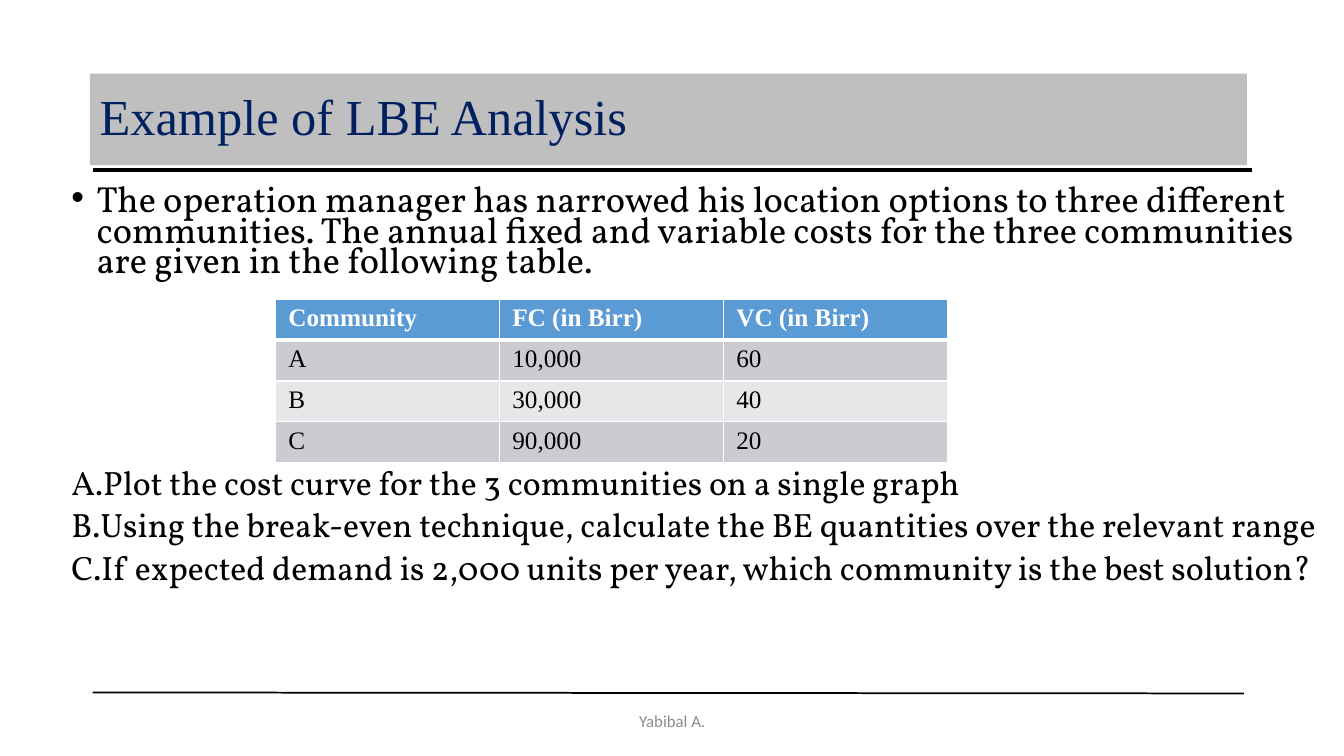
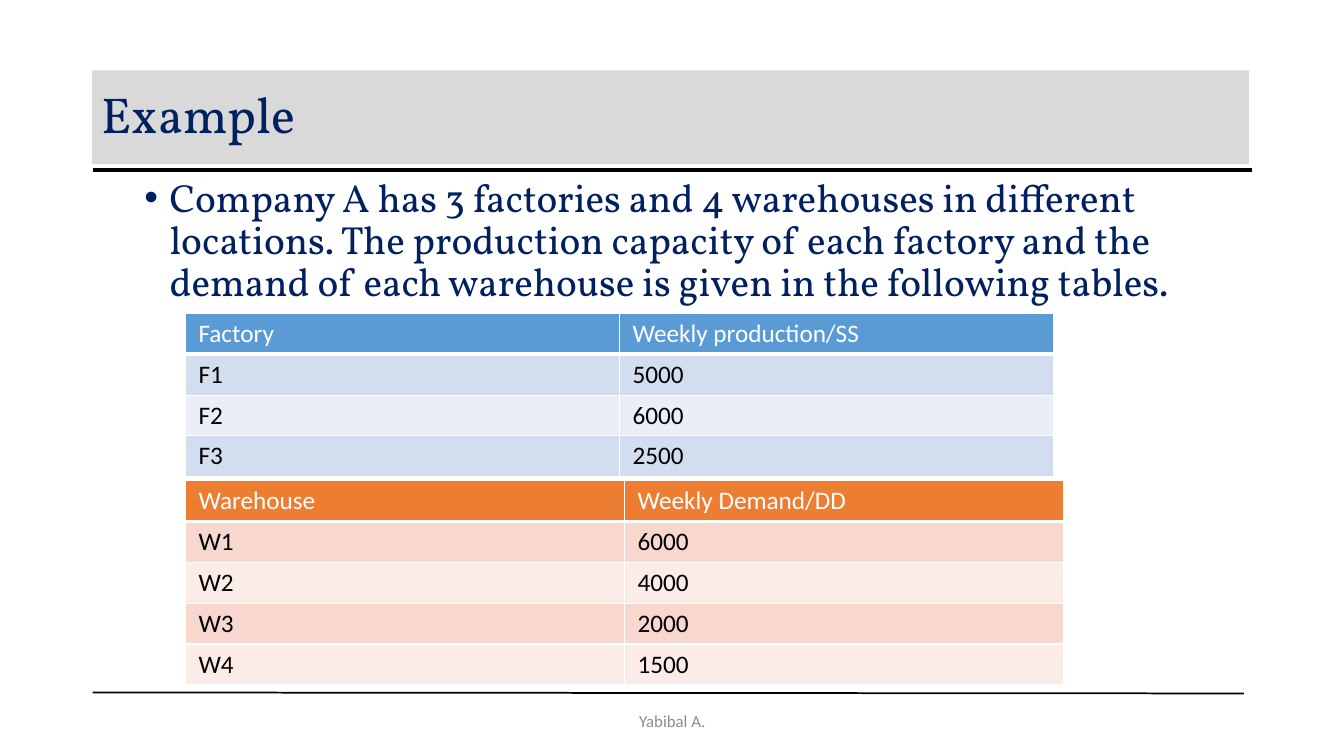
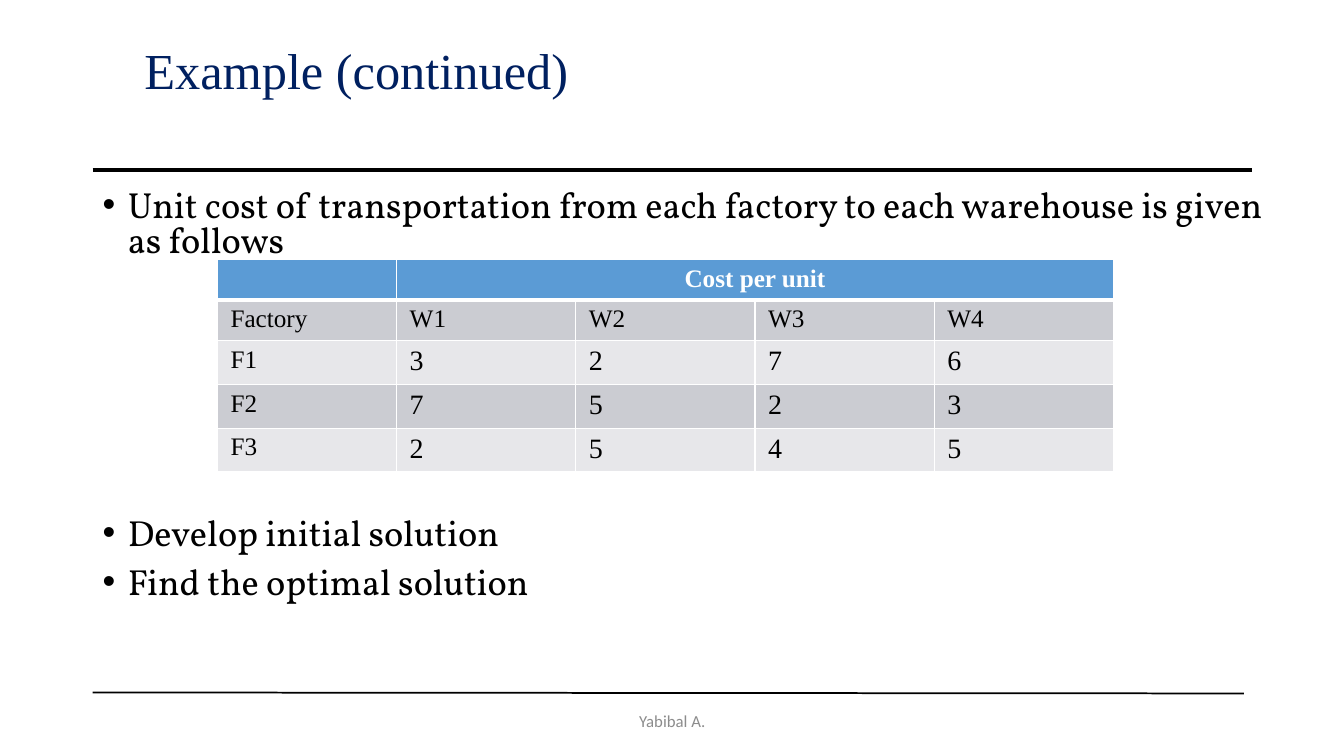
import pptx
import pptx.dml.color
import pptx.enum.shapes
import pptx.enum.text
import pptx.oxml.ns
import pptx.util
import lxml.etree

RGBColor = pptx.dml.color.RGBColor
Pt = pptx.util.Pt
Inches = pptx.util.Inches
ALIGN = pptx.enum.text.PP_ALIGN
ANCHOR = pptx.enum.text.MSO_ANCHOR
qn = pptx.oxml.ns.qn

BLACK = RGBColor(0x00, 0x00, 0x00)
WHITE = RGBColor(0xFF, 0xFF, 0xFF)
NAVY = RGBColor(0x00, 0x20, 0x60)
FOOTER_GREY = RGBColor(0x8C, 0x8C, 0x8C)
BAND_GREY = RGBColor(0xBF, 0xBF, 0xBF)
BAND_LIGHT = RGBColor(0xD9, 0xD9, 0xD9)
BLUE = RGBColor(0x5B, 0x9B, 0xD5)
ORANGE = RGBColor(0xED, 0x7D, 0x31)
GREY_ROWS = (RGBColor(0xCB, 0xCC, 0xD2), RGBColor(0xE7, 0xE7, 0xEA))
BLUE_ROWS = (RGBColor(0xD2, 0xDE, 0xEF), RGBColor(0xEA, 0xEF, 0xF7))
ORANGE_ROWS = (RGBColor(0xF8, 0xD7, 0xCE), RGBColor(0xFC, 0xEC, 0xE8))
SERIF, BOOK, SANS = "Times New Roman", "Vollkorn", "Calibri"

deck = pptx.Presentation()
deck.slide_width, deck.slide_height = Inches(13.33), Inches(7.5)
# Grid of 100 columns by 100 rows; every place below is given in it
COL, ROW = deck.slide_width / 100, deck.slide_height / 100
TABLE_ROW = 5.4


def write(paragraph, text, font, size, color, bold=False):
    run = paragraph.add_run()
    run.text = text
    run.font.name, run.font.size, run.font.bold = font, Pt(size), bold
    run.font.color.rgb = color


def text_area(slide, place, lines, font, size, color, fill=None, anchor=ANCHOR.TOP,
              align=ALIGN.LEFT, spacing=1, bullet=None):
    left, top, width, height = place
    box = (int(left * COL), int(top * ROW), int(width * COL), int(height * ROW))
    if fill is None:
        area = slide.shapes.add_textbox(*box)
    else:
        area = slide.shapes.add_shape(pptx.enum.shapes.MSO_SHAPE.RECTANGLE, *box)
        area.shadow.inherit = False
        area.fill.solid()
        area.fill.fore_color.rgb = fill
        area.line.fill.background()
    frame = area.text_frame
    frame.word_wrap, frame.vertical_anchor = True, anchor
    for i, line in enumerate(lines):
        paragraph = frame.add_paragraph() if i else frame.paragraphs[0]
        paragraph.alignment, paragraph.line_spacing = align, spacing
        if bullet:
            paragraph.space_before = Pt(10)
            properties = paragraph._p.get_or_add_pPr()
            properties.set("marL", str(Inches(0.25)))
            properties.set("indent", str(-Inches(0.25)))
            if bullet == "letters":
                lxml.etree.SubElement(properties, qn("a:buAutoNum"), type="alphaUcPeriod")
            else:
                lxml.etree.SubElement(properties, qn("a:buFont"), typeface="Arial")
                lxml.etree.SubElement(properties, qn("a:buChar"), char=bullet)
        write(paragraph, line, font, size, color)


# Content: titles are (text, place, font, band), texts are
# (place, lines, size, colour, line spacing, bullet), tables are
# (left, top, width, font, bold header, header fill, row fills, cells)
slides = [
    {
        "title": ("Example of LBE Analysis", (6.68, 9.73, 86.1, 12.13), SERIF, BAND_GREY),
        "texts": [
            ((4.58, 24.27, 94.2, 14.67),
             ["The operation manager has narrowed his location options to three different "
              "communities. The annual fixed and variable costs for the three communities "
              "are given in the following table."], 25.9, BLACK, 0.7, "•"),
            ((4.58, 61.87, 94.2, 18),
             ["Plot the cost curve for the 3 communities on a single graph",
              "Using the break-even technique, calculate the BE quantities over the relevant range",
              "If expected demand is 2,000 units per year, which community is the best solution?"],
             24.1, BLACK, 0.7, "letters"),
        ],
        "tables": [
            (20.48, 39.6, 50, SERIF, True, BLUE, GREY_ROWS,
             [["Community", "FC (in Birr)", "VC (in Birr)"],
              ["A", "10,000", "60"], ["B", "30,000", "40"], ["C", "90,000", "20"]]),
        ],
    },
    {
        "title": ("Example", (6.83, 9.33, 86.1, 12.4), BOOK, BAND_LIGHT),
        "texts": [
            ((10, 22.93, 85, 18),
             ["Company A has 3 factories and 4 warehouses in different locations. The production "
              "capacity of each factory and the demand of each warehouse is given in the "
              "following tables."], 28, NAVY, 0.9, "•"),
        ],
        "tables": [
            (13.8, 41.47, 64.6, SANS, False, BLUE, BLUE_ROWS,
             [["Factory", "Weekly production/SS"],
              ["F1", "5000"], ["F2", "6000"], ["F3", "2500"]]),
            (13.8, 63.6, 65.35, SANS, False, ORANGE, ORANGE_ROWS,
             [["Warehouse", "Weekly Demand/DD"],
              ["W1", "6000"], ["W2", "4000"], ["W3", "2000"], ["W4", "1500"]]),
        ],
    },
    {
        "title": ("Example (continued)", (10, 4, 85, 11.33), SERIF, None),
        "texts": [
            ((6.9, 24.53, 89.03, 10),
             ["Unit cost of transportation from each factory to each warehouse is given as follows"],
             25.9, BLACK, 0.8, "•"),
            ((6.9, 68, 89.03, 16),
             ["Develop initial solution", "Find the optimal solution"], 25.9, BLACK, 0.8, "•"),
        ],
        "tables": [
            (16.18, 34.35, 66.67, SERIF, True, BLUE, GREY_ROWS,
             [["", "Cost per unit", "", "", ""],
              ["Factory", "W1", "W2", "W3", "W4"],
              ["F1", "3", "2", "7", "6"],
              ["F2", "7", "5", "2", "3"],
              ["F3", "2", "5", "4", "5"]]),
        ],
    },
]

for content in slides:
    slide = deck.slides.add_slide(deck.slide_layouts[6])

    # Rules under the title and above the footer
    for x1, y1, x2, y2, weight in ((6.9, 22.53, 93.15, 22.53, 3), (6.9, 91.6, 92.55, 91.73, 1.25)):
        rule = slide.shapes.add_connector(
            pptx.enum.shapes.MSO_CONNECTOR.STRAIGHT,
            int(x1 * COL), int(y1 * ROW), int(x2 * COL), int(y2 * ROW))
        rule.line.color.rgb, rule.line.width = BLACK, Pt(weight)
        lxml.etree.SubElement(rule._element.spPr, qn("a:effectLst"))

    # Title and body texts
    title, place, font, band = content["title"]
    text_area(slide, place, [title], font, 36, NAVY, fill=band, anchor=ANCHOR.MIDDLE, spacing=0.9)
    for place, lines, size, color, spacing, bullet in content["texts"]:
        text_area(slide, place, lines, BOOK, size, color, spacing=spacing, bullet=bullet)

    # Tables
    for left, top, width, font, bold, header_fill, row_fills, rows in content["tables"]:
        spanned = rows[0][-1] == ""
        table = slide.shapes.add_table(
            len(rows), len(rows[0]), int(left * COL), int(top * ROW),
            int(width * COL), int(len(rows) * TABLE_ROW * ROW)).table
        for r, values in enumerate(rows):
            # A spanned header is as low as its text allows
            table.rows[r].height = int((5.1 if spanned and r == 0 else TABLE_ROW) * ROW)
            for c, value in enumerate(values):
                cell = table.cell(r, c)
                cell.margin_left = cell.margin_right = Inches(0.13)
                cell.margin_top = cell.margin_bottom = Inches(0.05 if value else 0)
                borders = cell._tc.get_or_add_tcPr()
                for side in "LRTB":
                    heavy = (r, side) in ((0, "B"), (1, "T"))
                    edge = lxml.etree.SubElement(
                        borders, qn("a:ln" + side), w=str(Pt(3 if heavy else 1)))
                    paint = lxml.etree.SubElement(edge, qn("a:solidFill"))
                    lxml.etree.SubElement(paint, qn("a:srgbClr"), val=str(WHITE))
                cell.fill.solid()
                cell.fill.fore_color.rgb = row_fills[(r - 1) % 2] if r else header_fill
                if value:
                    size = 20 if spanned and r > 1 and c else 18
                    write(cell.text_frame.paragraphs[0], value, font, size,
                          BLACK if r else WHITE, bold and r == 0)
        if spanned:
            table.cell(0, 1).merge(table.cell(0, len(rows[0]) - 1))
            table.cell(0, 1).text_frame.paragraphs[0].alignment = ALIGN.CENTER

    # Footer
    text_area(slide, (33.15, 92.67, 33.75, 5.33), ["Yabibal A."], SANS, 12, FOOTER_GREY,
              anchor=ANCHOR.MIDDLE, align=ALIGN.CENTER)

deck.save("out.pptx")
